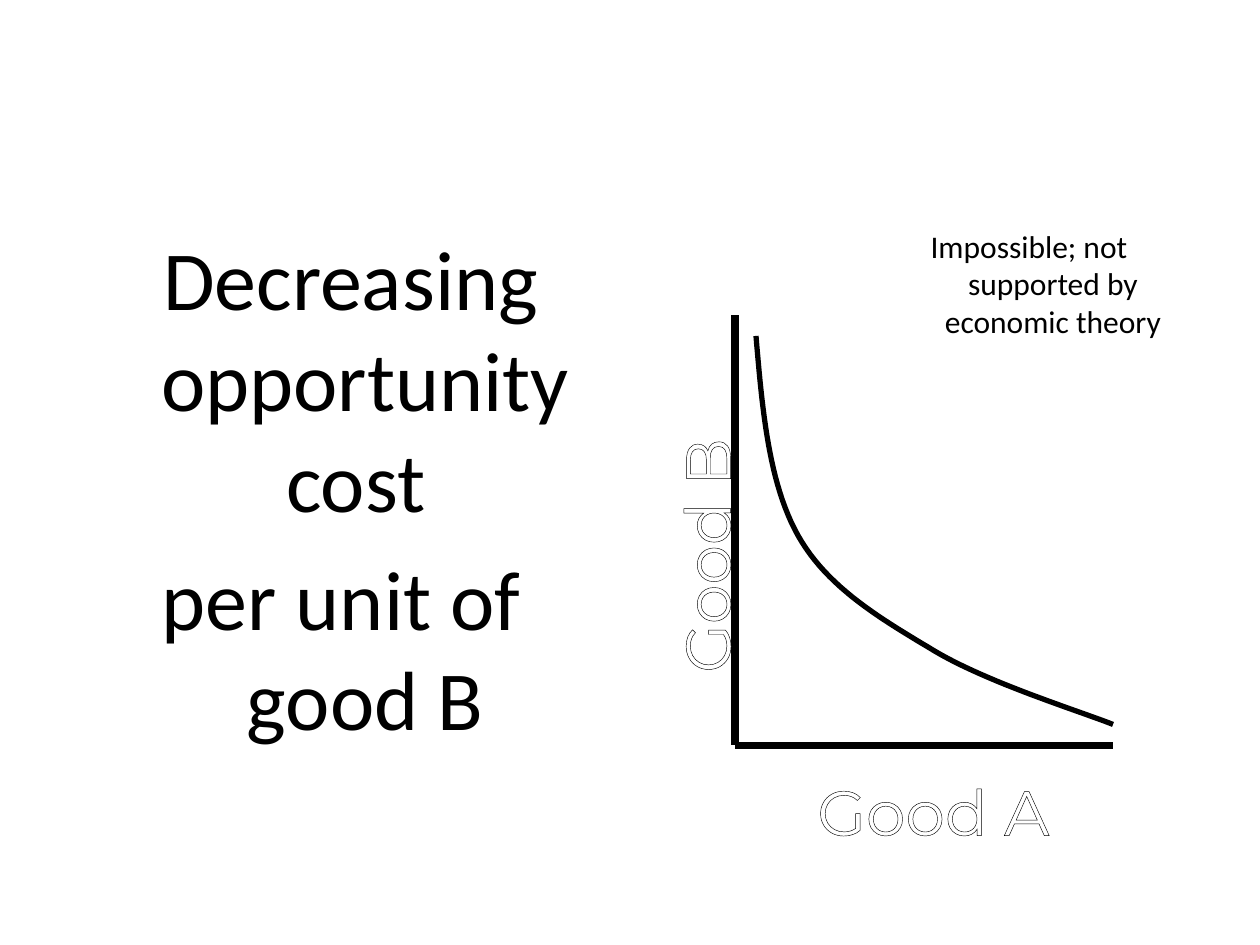
"""Build a slide on decreasing opportunity cost with a convex curve of two goods."""
from lxml import etree
from pptx import Presentation
from pptx.dml.color import RGBColor
from pptx.enum.shapes import MSO_CONNECTOR
from pptx.enum.text import MSO_ANCHOR, MSO_AUTO_SIZE, PP_ALIGN
from pptx.oxml.ns import qn
from pptx.util import Inches, Pt

LINE = MSO_CONNECTOR.STRAIGHT
FIT, FIXED = MSO_AUTO_SIZE.SHAPE_TO_FIT_TEXT, MSO_AUTO_SIZE.NONE
TOP, MID = MSO_ANCHOR.TOP, PP_ALIGN.CENTER
INK, PAPER = "000000", "FFFFFF"
CELL = Inches(1) / 12


def grid(*nums):
    return [round(n * CELL) for n in nums]


def write(box, lines, face, size, hue, hang, gap, **frame):
    for key, val in {"vertical_anchor": TOP, **frame}.items():
        setattr(box.text_frame, key, val)
    box.text_frame.text = "\n".join(lines)
    for i, para in enumerate(box.text_frame.paragraphs):
        props = para._p.get_or_add_pPr()
        props.set("marL", str(Inches(hang)))
        props.set("indent", str(-Inches(hang)))
        para.alignment = MID
        para.space_before = Pt(gap if i else 0)
        etree.SubElement(props, qn("a:buNone"))
        font = para.runs[0].font
        for key, val in {"name": face, "size": Pt(size)}.items():
            setattr(font, key, val)
        font.color.rgb = RGBColor.from_string(hue)


deck = Presentation()
deck.slide_width, deck.slide_height = grid(120, 90)
slide = deck.slides.add_slide(deck.slide_layouts[1])
shapes = slide.shapes
title = shapes.title
title.element.getparent().remove(title.element)

body = slide.placeholders[1]
body.left, body.top, body.width, body.height = grid(6, 21, 53, 59.4)
write(body, [" Decreasing opportunity cost ", "per unit of good B"],
      "Calibri", 48, INK, 0.38, 9.6, word_wrap=True, auto_size=FIXED)

for ends in [(70, 30, 70, 71), (106, 71, 70, 71)]:
    axis = shapes.add_connector(LINE, *grid(*ends))
    axis.line.color.rgb = RGBColor.from_string(INK)
    axis.line.width = Pt(4.5)
    etree.SubElement(axis._element.spPr, qn("a:effectLst"))

for name, left, top, turn in [("Good A", 77, 73, 0), ("Good B", 53.75, 50.25, 270)]:
    label = shapes.add_textbox(*grid(left, top, 23.8, 5.3))
    label.rotation = turn
    write(label, [name], "Montserrat", 36, PAPER, 0, 0,
          word_wrap=False, auto_size=FIXED)
    props = label.text_frame.paragraphs[0].runs[0]._r.get_or_add_rPr()
    edge = etree.Element(qn("a:ln"), w=str(Pt(0.75)))
    fill = etree.SubElement(edge, qn("a:solidFill"))
    etree.SubElement(fill, qn("a:srgbClr"), val=INK)
    props.insert(0, edge)

knots = [(72, 32), (72.6, 39), (73.2, 46), (76, 51), (78.8, 56),
         (84, 59), (89, 62), (94, 65), (103, 67.8), (106, 69)]
steps = 24
trace = []
for k in range(0, len(knots) - 1, 3):
    for n in range(1, steps + 1):
        t = n / steps
        parts = [(1 - t) ** 3, 3 * t * (1 - t) ** 2, 3 * t * t * (1 - t), t ** 3]
        trace.append(grid(*[sum(w * p[d] for w, p in zip(parts, knots[k:k + 4]))
                            for d in (0, 1)]))
pen = shapes.build_freeform(*grid(*knots[0]))
pen.add_line_segments(trace, close=False)
curve = pen.convert_to_shape()
curve.shadow.inherit = False
curve.fill.background()
curve.line.color.rgb = RGBColor.from_string(INK)
curve.line.width = Pt(3)

note = shapes.add_textbox(*grid(82, 21, 32, 34.8))
write(note, ["Impossible; not supported by economic theory"],
      "Calibri", 18, INK, 0.38, 0, word_wrap=True, auto_size=FIT)

deck.save("out.pptx")
